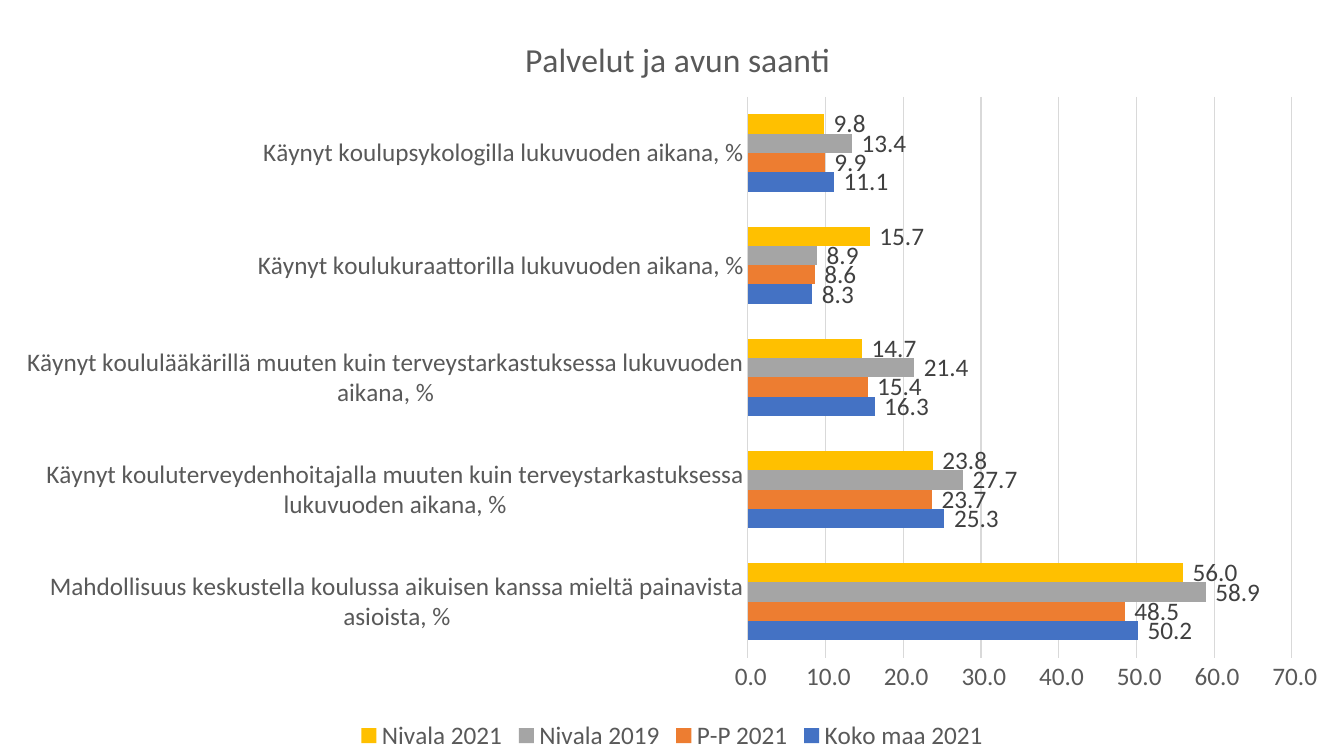
from lxml.etree import SubElement
from pptx import Presentation
from pptx.chart.data import CategoryChartData
from pptx.dml.color import RGBColor
from pptx.enum.chart import (XL_CHART_TYPE, XL_LABEL_POSITION,
                             XL_LEGEND_POSITION, XL_TICK_MARK)
from pptx.oxml.ns import qn
from pptx.util import Emu, Pt

WIDE, HIGH = 1344, 756
CATS = [
    "Mahdollisuus keskustella koulussa aikuisen kanssa mieltä painavista asioista, %",
    "Käynyt kouluterveydenhoitajalla muuten kuin terveystarkastuksessa lukuvuoden aikana, %",
    "Käynyt koululääkärillä muuten kuin terveystarkastuksessa lukuvuoden aikana, %",
    "Käynyt koulukuraattorilla lukuvuoden aikana, %",
    "Käynyt koulupsykologilla lukuvuoden aikana, %",
]
BARS = [
    ("Koko maa 2021", "4472C4", (50.2, 25.3, 16.3, 8.3, 11.1)),
    ("P-P 2021", "ED7D31", (48.5, 23.7, 15.4, 8.6, 9.9)),
    ("Nivala 2019", "A5A5A5", (58.9, 27.7, 21.4, 8.9, 13.4)),
    ("Nivala 2021", "FFC000", (56.0, 23.8, 14.7, 15.7, 9.8)),
]
FORMAT = r"#\ ##0.0"


def px(count):
    return Emu(round(count * 914400 / 100.8))


def color(code):
    return RGBColor.from_string(code)


def apply(target, values):
    for name, value in values.items():
        setattr(target, name, value)


class Deck:
    face = "Calibri"
    text = "595959"
    rule = "D9D9D9"

    def __init__(self):
        self.file = Presentation()
        apply(self.file, {"slide_width": px(WIDE), "slide_height": px(HIGH)})
        self.slide = self.file.slides.add_slide(self.file.slide_layouts[6])

    def font(self, font, size=18, code=None):
        apply(font, {"name": self.face, "size": Pt(size), "bold": False})
        font.color.rgb = color(code or self.text)

    def line(self, line):
        line.color.rgb = color(self.rule)
        line.width = Pt(0.75)

    def place(self, owner, index, values):
        for old in owner.findall(qn("c:layout")):
            owner.remove(old)
        layout = SubElement(owner, qn("c:layout"))
        owner.insert(index, layout)
        manual = SubElement(layout, qn("c:manualLayout"))
        for name, value in values.items():
            SubElement(manual, qn("c:" + name)).set("val", str(value))

    def chart(self, cats, bars):
        data = CategoryChartData(number_format=FORMAT)
        data.categories = cats
        for name, _, values in bars:
            data.add_series(name, values)
        frame = self.slide.shapes.add_chart(
            XL_CHART_TYPE.BAR_CLUSTERED, 0, 0, px(WIDE), px(HIGH), data)
        chart = frame.chart
        self.font(chart.font)
        plot = chart.plots[0]
        apply(plot, {"gap_width": 182, "overlap": 0, "vary_by_categories": False})
        for series, (_, code, _) in zip(plot.series, bars):
            series.format.fill.solid()
            series.format.fill.fore_color.rgb = color(code)
            self.labels(series.data_labels)
        self.axes(chart)
        apply(chart, {"has_legend": True})
        apply(chart.legend, {"position": XL_LEGEND_POSITION.BOTTOM,
                             "include_in_layout": False})
        self.font(chart.legend.font)
        area = plot._element.getparent()
        self.place(area, 0, {
            "layoutTarget": "inner", "xMode": "edge", "yMode": "edge",
            "x": round(748 / WIDE, 4), "y": round(97 / HIGH, 4),
            "w": round(544 / WIDE, 4), "h": round(561 / HIGH, 4)})
        return chart

    def labels(self, labels):
        apply(labels, {"show_value": True, "number_format": FORMAT,
                       "number_format_is_linked": False,
                       "position": XL_LABEL_POSITION.OUTSIDE_END})
        self.font(labels.font, code="404040")

    def axes(self, chart):
        for axis in (chart.category_axis, chart.value_axis):
            apply(axis, {"major_tick_mark": XL_TICK_MARK.NONE,
                         "minor_tick_mark": XL_TICK_MARK.NONE})
            self.font(axis.tick_labels.font)
        self.line(chart.category_axis.format.line)
        value = chart.value_axis
        apply(value, {"minimum_scale": 0, "maximum_scale": 70, "major_unit": 10,
                      "has_major_gridlines": True})
        apply(value.tick_labels, {"number_format": FORMAT,
                                  "number_format_is_linked": False})
        value.format.line.fill.background()
        self.line(value.major_gridlines.format.line)

    def title(self, chart, words):
        title = chart.chart_title
        title.include_in_layout = False
        part = title.text_frame.paragraphs[0]
        run = part.add_run()
        run.text = words
        self.font(part.font, 24)
        self.font(run.font, 24)
        self.place(title._element, 1, {
            "xMode": "edge", "yMode": "edge",
            "x": round(519 / WIDE, 4), "y": round(31 / HIGH, 4)})


def main():
    deck = Deck()
    chart = deck.chart(CATS, BARS)
    deck.title(chart, "Palvelut ja avun saanti")
    deck.file.save("out.pptx")


if __name__ == "__main__":
    main()
